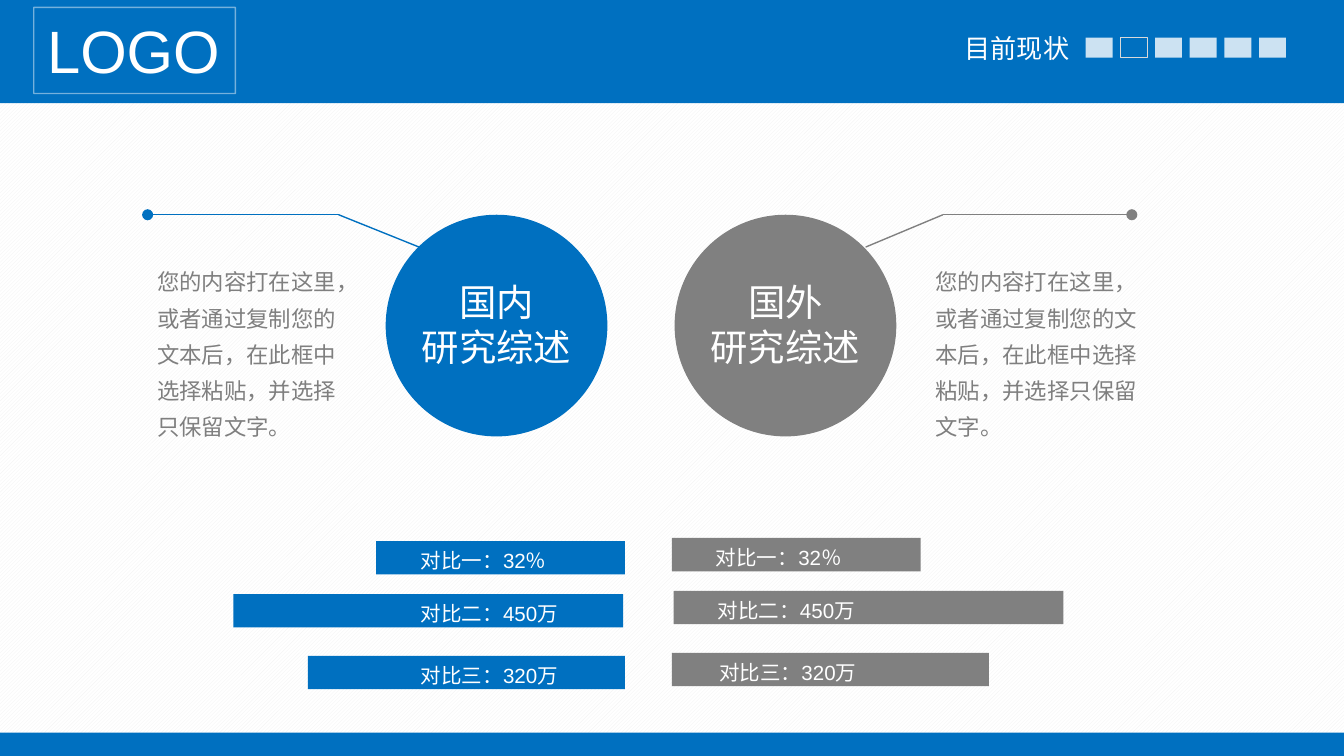
from dataclasses import dataclass

from lxml.etree import SubElement
from pptx import Presentation
from pptx.dml.color import RGBColor
from pptx.enum.dml import MSO_PATTERN
from pptx.enum.shapes import MSO_CONNECTOR, MSO_SHAPE
from pptx.enum.text import MSO_ANCHOR, PP_ALIGN
from pptx.oxml.ns import qn
from pptx.util import Cm, Pt

BLUE, GRAY, WHITE = "0070C0", "808080", "FFFFFF"
TEXT_GRAY, PALE_GRAY = "7F7F7F", "D9D9D9"
LATIN, CHINESE = "Arial", "Noto Sans CJK SC"
WIDTH, HEIGHT = 25.4, 14.29
WIDE_INSETS, NARROW_INSETS = (0.25, 0.13), (0.18, 0.1)


@dataclass
class Box:
    left: float
    top: float
    width: float
    height: float


@dataclass
class Topic:
    name: str
    color: str
    circle_left: float
    dot_x: float
    bend_x: float
    circle_x: float
    body: Box


@dataclass
class Bar:
    text: str
    color: str
    box: Box
    label_left: float


def rgb(color: str) -> RGBColor:
    return RGBColor.from_string(color)


def set_alpha(fill_parent, percent: int) -> None:
    color = next(fill_parent.iter(qn("a:srgbClr")))
    SubElement(color, qn("a:alpha"), val=str(percent * 1000))


def add_shape(slide, box: Box, fill: str | None, kind=MSO_SHAPE.RECTANGLE,
              line: str | None = None, line_width: float = 0.75):
    shape = slide.shapes.add_shape(
        kind, Cm(box.left), Cm(box.top), Cm(box.width), Cm(box.height))
    shape.shadow.inherit = False
    if fill:
        shape.fill.solid()
        shape.fill.fore_color.rgb = rgb(fill)
    else:
        shape.fill.background()
    if line:
        shape.line.color.rgb = rgb(line)
        shape.line.width = Pt(line_width)
    else:
        shape.line.fill.background()
    return shape


def write_text(shape, lines: list[str], size: float, color: str = WHITE,
               font: str = LATIN, align=PP_ALIGN.LEFT, insets=WIDE_INSETS,
               wrap: bool = False, spacing: float | None = None) -> None:
    frame = shape.text_frame
    frame.word_wrap = wrap
    frame.vertical_anchor = MSO_ANCHOR.TOP
    frame.margin_left = frame.margin_right = Cm(insets[0])
    frame.margin_top = frame.margin_bottom = Cm(insets[1])
    for index, line in enumerate(lines):
        paragraph = frame.add_paragraph() if index else frame.paragraphs[0]
        paragraph.alignment = align
        paragraph.line_spacing = spacing
        run = paragraph.add_run()
        run.text = line
        run.font.size = Pt(size)
        run.font.name = font
        run.font.color.rgb = rgb(color)
        SubElement(run.font._element, qn("a:ea"), typeface=CHINESE)


def add_text(slide, box: Box, lines: list[str], size: float, **style) -> None:
    text_box = slide.shapes.add_textbox(
        Cm(box.left), Cm(box.top), Cm(box.width), Cm(box.height))
    write_text(text_box, lines, size, **style)


def add_line(slide, start: tuple[float, float], end: tuple[float, float],
             color: str, dot: bool = False) -> None:
    connector = slide.shapes.add_connector(
        MSO_CONNECTOR.STRAIGHT, *(Cm(value) for value in start + end))
    connector.line.color.rgb = rgb(color)
    connector.line.width = Pt(0.75)
    if dot:
        SubElement(connector.line._get_or_add_ln(), qn("a:tailEnd"), type="oval")
    SubElement(connector._element.spPr, qn("a:effectLst"))


def add_header(slide) -> None:
    add_shape(slide, Box(0, 0, WIDTH, 1.95), BLUE)
    add_text(slide, Box(17.98, 0.48, 2.54, 0.86), ["目前现状"], 14, font=CHINESE)
    # Section markers: the second one is the current section
    for index in range(6):
        box = Box(20.52 + 0.655 * index, 0.71, 0.51, 0.38)
        if index == 1:
            add_shape(slide, box, None, line=PALE_GRAY, line_width=0.5)
        else:
            marker = add_shape(slide, box, WHITE)
            set_alpha(marker._element.spPr, 80)
    logo = add_shape(slide, Box(0.64, 0.14, 3.81, 1.63), None, line=WHITE)
    set_alpha(logo._element.spPr, 46)
    write_text(logo, ["LOGO"], 32)


def add_topic(slide, topic: Topic) -> None:
    top = 4.06
    add_shape(slide, Box(topic.circle_left, top, 4.19, 4.19), topic.color,
              MSO_SHAPE.FLOWCHART_CONNECTOR)
    add_text(slide, Box(topic.circle_left + 0.48, top + 1.12, 3.23, 1.9),
             [topic.name, "研究综述"], 20, align=PP_ALIGN.CENTER,
             insets=NARROW_INSETS)
    bend = (topic.bend_x, top)
    add_line(slide, bend, (topic.dot_x, top), topic.color, dot=True)
    add_line(slide, bend, (topic.circle_x, 4.67), topic.color)
    add_text(slide, topic.body, [BODY], 12, color=TEXT_GRAY,
             insets=NARROW_INSETS, wrap=True, spacing=1.35)


def add_bar(slide, bar: Bar) -> None:
    add_shape(slide, bar.box, bar.color)
    add_text(slide, Box(bar.label_left, bar.box.top, 3.2, 0.74), [bar.text], 11)


BODY = "您的内容打在这里，或者通过复制您的文本后，在此框中选择粘贴，并选择只保留文字。"
TOPICS = [
    Topic("国内", BLUE, 7.29, 2.79, 6.4, 7.92, Box(2.79, 4.8, 3.91, 3.66)),
    Topic("国外", GRAY, 12.75, 21.39, 17.82, 16.36, Box(17.5, 4.8, 4.19, 3.66)),
]
# Text, top, width, inner edge of the blue bar, left edge of the gray bar
COMPARISONS = [
    ("对比一：32％", 10.23, 4.7, 11.81, 12.7),
    ("对比二：450万", 11.23, 7.37, 11.78, 12.73),
    ("对比三：320万", 12.4, 5.99, 11.81, 12.7),
]


def main() -> None:
    presentation = Presentation()
    presentation.slide_width, presentation.slide_height = Cm(WIDTH), Cm(HEIGHT)
    slide = presentation.slides.add_slide(presentation.slide_layouts[6])

    # Hatched background
    background = slide.background.fill
    background.patterned()
    background.pattern = MSO_PATTERN.LIGHT_UPWARD_DIAGONAL
    background.fore_color.rgb = rgb("F2F2F2")
    background.back_color.rgb = rgb(WHITE)

    # Header and footer
    add_header(slide)
    add_shape(slide, Box(0, 13.85, WIDTH, 0.44), BLUE)

    # Comparison bars on both sides of the middle
    for index, (text, top, width, right, left) in enumerate(COMPARISONS):
        add_bar(slide, Bar(text, BLUE, Box(right - width, top, width, 0.63), 7.7))
        add_bar(slide, Bar(text, GRAY, Box(left, top - 0.06, width, 0.63),
                           13.28 + 0.03 * index))

    # Circles with callout lines and descriptions
    for topic in TOPICS:
        add_topic(slide, topic)

    presentation.save("out.pptx")


if __name__ == "__main__":
    main()
